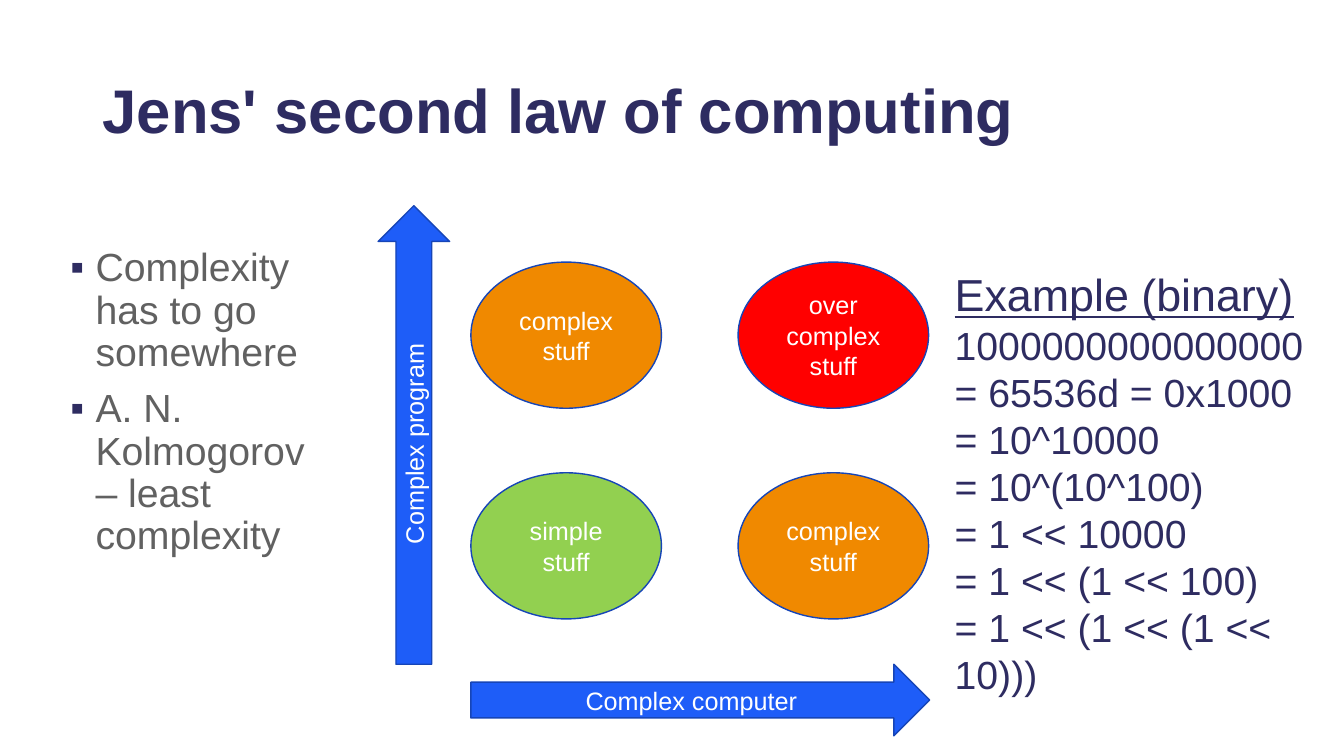
"""Builds the slide on Jens' second law of computing."""
from lxml import etree
from pptx import Presentation
from pptx.dml.color import RGBColor
from pptx.enum.shapes import MSO_SHAPE
from pptx.enum.text import MSO_ANCHOR, PP_ALIGN
from pptx.oxml.ns import qn
from pptx.util import Inches, Pt

ARROW, ELLIPSE = MSO_SHAPE.RIGHT_ARROW, MSO_SHAPE.OVAL
MIDDLE = MSO_ANCHOR.MIDDLE
CENTER = PP_ALIGN.CENTER
NAVY, GREY, WHITE = "2E2C61", "616161", "FFFFFF"
BLUE, OUTLINE = "1E5DF8", "1645B7"
GREEN, ORANGE, RED = "92D050", "F08900", "FF0000"


def rgb(value):
    return RGBColor.from_string(value)


def add_run(paragraph, text, size, color):
    run = paragraph.add_run()
    run.text = text
    run.font.name = "Arial"
    run.font.size = Pt(size)
    run.font.color.rgb = rgb(color)
    return run


prs = Presentation()
prs.slide_width, prs.slide_height = Inches(13.33), Inches(7.5)
slide = prs.slides.add_slide(prs.slide_layouts[6])

title = slide.shapes.add_textbox(Inches(0.92), Inches(0.4), Inches(11.5), Inches(1.45)).text_frame
title.word_wrap = True
title.vertical_anchor = MIDDLE
title.paragraphs[0].line_spacing = 0.9
add_run(title.paragraphs[0], "Jens' second law of computing", 44, NAVY).font.bold = True

claims = slide.shapes.add_textbox(Inches(0.6), Inches(2.41), Inches(2.73), Inches(3.52)).text_frame
claims.word_wrap = True
for i, claim in enumerate(["Complexity has to go somewhere", "A. N. Kolmogorov – least complexity"]):
    paragraph = claims.add_paragraph() if i else claims.paragraphs[0]
    paragraph.line_spacing = 0.9
    paragraph.space_before = Pt(10 if i else 0)
    properties = paragraph._p.get_or_add_pPr()
    properties.set("marL", str(Inches(0.25)))
    properties.set("indent", str(-Inches(0.25)))
    bullet_color = etree.SubElement(properties, qn("a:buClr"))
    etree.SubElement(bullet_color, qn("a:srgbClr"), val=NAVY)
    etree.SubElement(properties, qn("a:buFont"), typeface="Arial")
    etree.SubElement(properties, qn("a:buChar"), char="▪")
    add_run(paragraph, claim, 28, GREY)

simple_x, complex_x = 4.67, 7.32
complex_y, simple_y = 2.6, 4.69
axis_size, stuff_size = (4.55, 0.71), (1.89, 1.45)
diagram = [
    (ARROW, 4.67, 6.59, axis_size, 0, BLUE, ["Complex computer"]),
    (ARROW, 1.83, 3.96, axis_size, 270, BLUE, ["Complex program"]),
    (ELLIPSE, simple_x, simple_y, stuff_size, 0, GREEN, ["simple stuff"]),
    (ELLIPSE, simple_x, complex_y, stuff_size, 0, ORANGE, ["complex", "stuff"]),
    (ELLIPSE, complex_x, simple_y, stuff_size, 0, ORANGE, ["complex", "stuff"]),
    (ELLIPSE, complex_x, complex_y, stuff_size, 0, RED, ["over", "complex", "stuff"]),
]
for kind, left, top, (width, height), rotation, fill, lines in diagram:
    part = slide.shapes.add_shape(kind, Inches(left), Inches(top), Inches(width), Inches(height))
    part.rotation = rotation
    part.shadow.inherit = False
    part.fill.solid()
    part.fill.fore_color.rgb = rgb(fill)
    part.line.color.rgb = rgb(OUTLINE)
    part.line.width = Pt(1)
    label = part.text_frame
    label.word_wrap = True
    label.vertical_anchor = MIDDLE
    for i, line in enumerate(lines):
        paragraph = label.add_paragraph() if i else label.paragraphs[0]
        paragraph.alignment = CENTER
        add_run(paragraph, line, 18, WHITE)

example = slide.shapes.add_textbox(Inches(9.37), Inches(2.6), Inches(3.92), Inches(4.41)).text_frame
example.word_wrap = True
add_run(example.paragraphs[0], "Example (binary)", 32, NAVY).font.underline = True
for notation in [
    "1000000000000000",
    "= 65536d = 0x1000",
    "= 10^10000",
    "= 10^(10^100)",
    "= 1 << 10000",
    "= 1 << (1 << 100)",
    "= 1 << (1 << (1 << 10)))",
]:
    add_run(example.add_paragraph(), notation, 28, NAVY)

prs.save("out.pptx")
